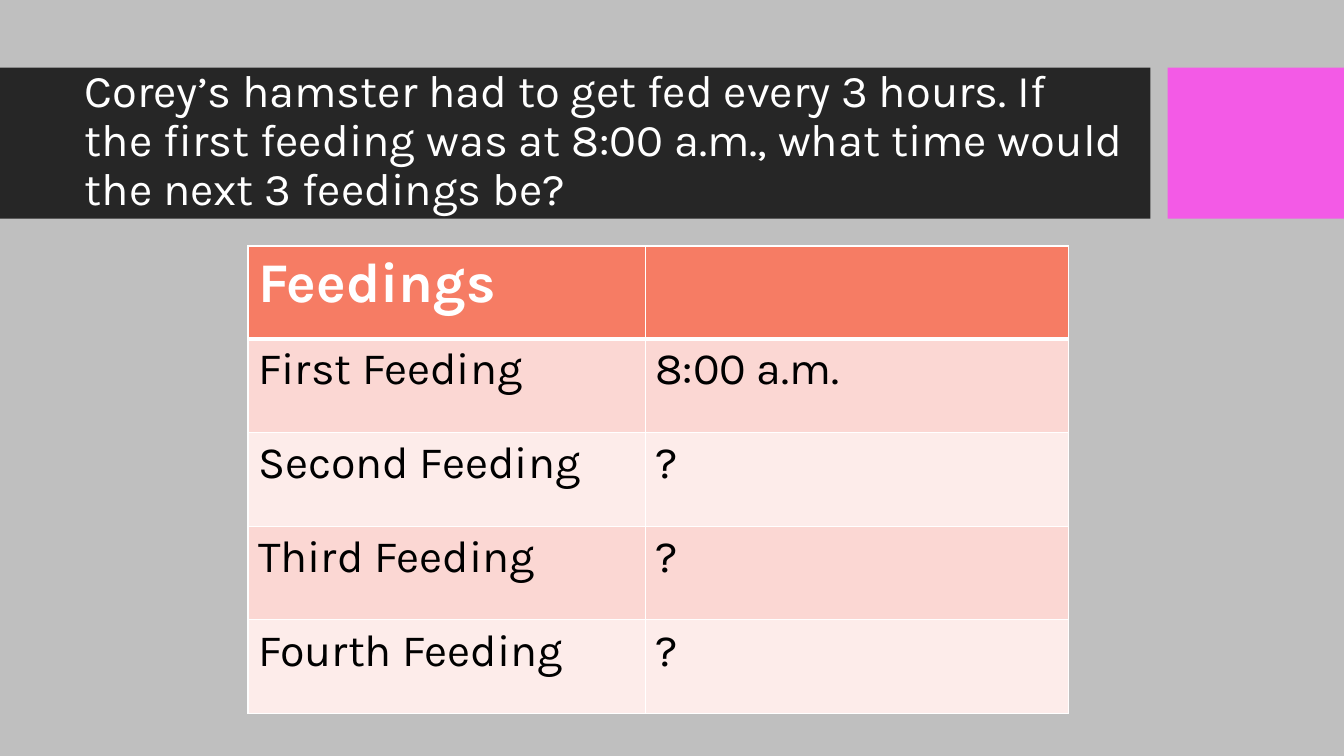
from lxml import etree
from pptx import Presentation
from pptx.dml.color import RGBColor
from pptx.enum.shapes import MSO_SHAPE
from pptx.enum.text import MSO_ANCHOR, MSO_AUTO_SIZE, PP_ALIGN
from pptx.oxml.ns import qn
from pptx.util import Emu, Pt

RECTANGLE = MSO_SHAPE.RECTANGLE
MIDDLE = MSO_ANCHOR.MIDDLE
NO_AUTOFIT = MSO_AUTO_SIZE.NONE
LEFT = PP_ALIGN.LEFT

EMU_PER_PX = 9144
SLIDE_SIZE = (1333, 750)
BANNER_BOX = (0, 67, 1333, 150)
TABLE_BOX = (246, 244, 814, 464)
COLUMN_WIDTHS = (394, 420)
HEADER_HEIGHT = 92
COLORS = {
    "background": "BFBFBF",
    "banner": "262626",
    "accent": "F35AE6",
    "header": "F67C64",
    "band_dark": "FBD7D3",
    "band_light": "FDECEA",
    "white": "FFFFFF",
    "black": "000000",
}
TITLE_FORMAT = {"name": "Karla", "size": Pt(32.4), "bold": False}
HEADER_FORMAT = {"name": "Karla", "size": Pt(40), "bold": True}
BODY_FORMAT = {"name": "Karla", "size": Pt(32), "bold": False}
QUESTION = (
    "Corey’s hamster had to get fed every 3 hours. If the first feeding was "
    "at 8:00 a.m., what time would the next 3 feedings be?"
)
FEEDINGS = [
    ("Feedings", ""),
    ("First Feeding", "8:00 a.m."),
    ("Second Feeding", "?"),
    ("Third Feeding", "?"),
    ("Fourth Feeding", "?"),
]


def px(length):
    """Turn pixels into EMU."""
    return Emu(length * EMU_PER_PX)


def color(name):
    """Look up a named colour."""
    return RGBColor.from_string(COLORS[name])


def format_font(font, values, color_name):
    """Apply a dict of font values and a colour."""
    for attribute, value in values.items():
        setattr(font, attribute, value)
    font.color.rgb = color(color_name)


def add_bar(slide, box, color_name):
    """Add a plain filled rectangle."""
    shape = slide.shapes.add_shape(RECTANGLE, *map(px, box))
    shape.shadow.inherit = False
    shape.fill.solid()
    shape.fill.fore_color.rgb = color(color_name)
    shape.line.fill.background()


def add_banner(slide, box):
    """Place the two bars and the title over them."""
    left, top, width, height = box
    accent_width, gap = 175, 17
    bar_width = width - accent_width - gap
    add_bar(slide, (left, top, bar_width, height), "banner")
    add_bar(slide, (left + width - accent_width, top, accent_width, height), "accent")

    title = slide.shapes.title
    title_box = (left + 74, top + 15, bar_width - 90, height - 32)
    for attribute, length in zip(("left", "top", "width", "height"), title_box):
        setattr(title, attribute, px(length))
    slide.shapes.element.append(title.element)
    frame = title.text_frame
    frame.text = QUESTION
    frame.word_wrap = True
    frame.auto_size = NO_AUTOFIT
    frame.vertical_anchor = MIDDLE
    paragraph = frame.paragraphs[0]
    paragraph.alignment = LEFT
    paragraph.line_spacing = 0.9
    format_font(paragraph.runs[0].font, TITLE_FORMAT, "white")


def add_borders(cell, widths):
    """Draw white cell borders with a width in points for each side."""
    properties = cell._tc.get_or_add_tcPr()
    for side, width in widths.items():
        line = etree.SubElement(properties, qn(f"a:ln{side}"), w=str(Pt(width)))
        fill = etree.SubElement(line, qn("a:solidFill"))
        etree.SubElement(fill, qn("a:srgbClr"), val=COLORS["white"])


def add_feeding_table(slide, box):
    """Place the feeding table with its header and banded rows."""
    height = box[3]
    table = slide.shapes.add_table(
        len(FEEDINGS), len(COLUMN_WIDTHS), *map(px, box)
    ).table
    for column, width in zip(table.columns, COLUMN_WIDTHS):
        column.width = px(width)
    body_height = (height - HEADER_HEIGHT) // (len(FEEDINGS) - 1)

    for row_index, texts in enumerate(FEEDINGS):
        is_header = row_index == 0
        table.rows[row_index].height = px(HEADER_HEIGHT if is_header else body_height)
        band = "band_dark" if row_index % 2 else "band_light"
        borders = {
            "L": 1,
            "R": 1,
            "T": 3 if row_index == 1 else 1,
            "B": 3 if is_header else 1,
        }
        for column_index, text in enumerate(texts):
            cell = table.cell(row_index, column_index)
            add_borders(cell, borders)
            cell.fill.solid()
            cell.fill.fore_color.rgb = color("header" if is_header else band)
            cell.text = text
            for run in cell.text_frame.paragraphs[0].runs:
                format_font(
                    run.font,
                    HEADER_FORMAT if is_header else BODY_FORMAT,
                    "white" if is_header else "black",
                )


def main():
    """Build and save the presentation."""
    presentation = Presentation()
    presentation.slide_width, presentation.slide_height = map(px, SLIDE_SIZE)
    slide = presentation.slides.add_slide(presentation.slide_layouts[5])
    slide.background.fill.solid()
    slide.background.fill.fore_color.rgb = color("background")
    add_banner(slide, BANNER_BOX)
    add_feeding_table(slide, TABLE_BOX)
    presentation.save("out.pptx")


if __name__ == "__main__":
    main()
